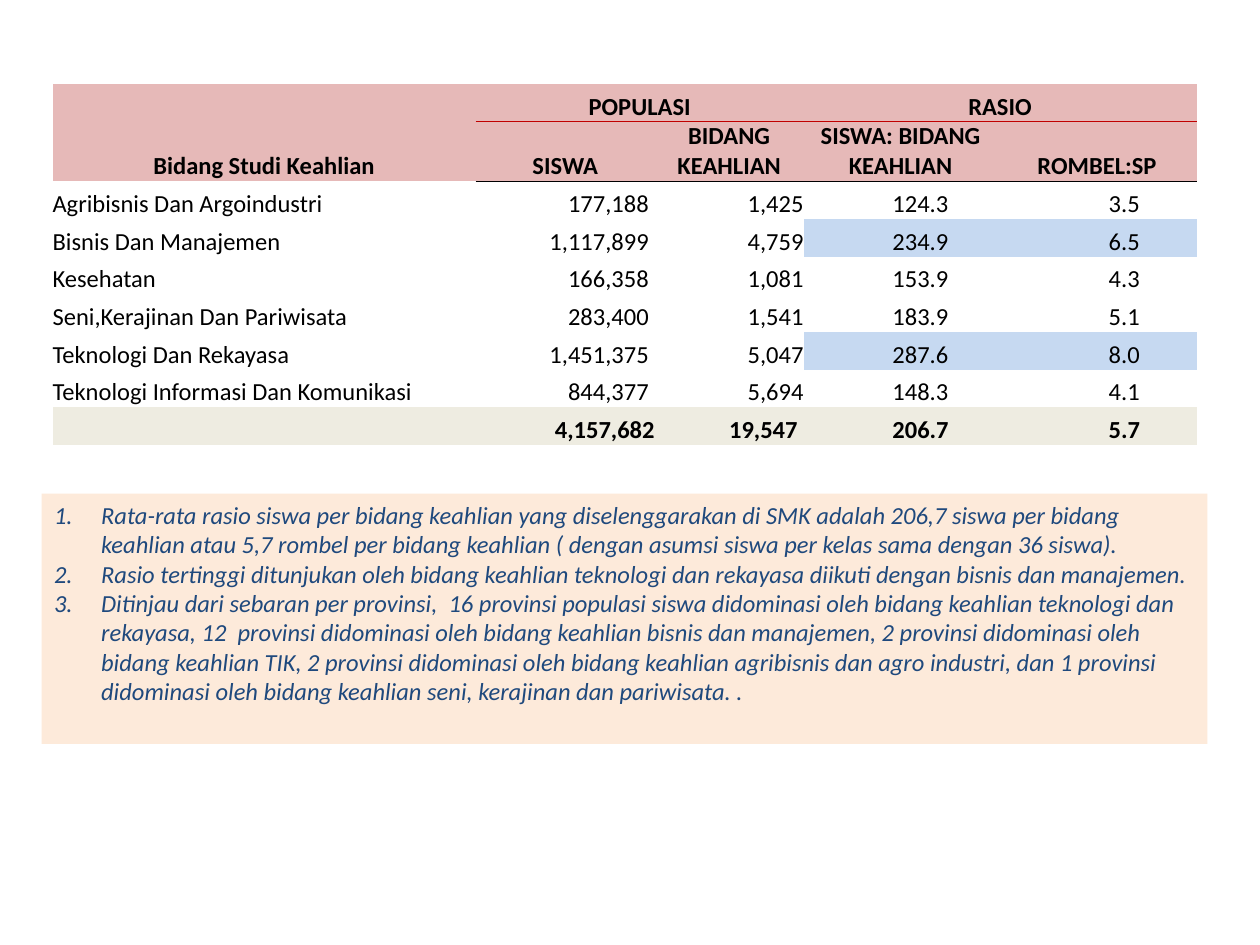
"""Build a slide with a table of vocational fields and numbered findings."""
from lxml import etree
from pptx import Presentation
from pptx.dml import color
from pptx.enum import shapes, text
from pptx.oxml import ns
from pptx.util import Cm, Pt

HEADER = [
    ("Bidang Studi Keahlian", "POPULASI", "", "RASIO", ""),
    ("", "SISWA", "BIDANG KEAHLIAN", "SISWA: BIDANG KEAHLIAN", "ROMBEL:SP"),
]
BODY = [
    ("Agribisnis Dan Argoindustri", "177,188", "1,425", "124.3", "3.5"),
    ("Bisnis Dan Manajemen", "1,117,899", "4,759", "234.9", "6.5"),
    ("Kesehatan", "166,358", "1,081", "153.9", "4.3"),
    ("Seni,Kerajinan Dan Pariwisata", "283,400", "1,541", "183.9", "5.1"),
    ("Teknologi Dan Rekayasa", "1,451,375", "5,047", "287.6", "8.0"),
    ("Teknologi Informasi Dan Komunikasi", "844,377", "5,694", "148.3", "4.1"),
]
TOTAL = ("", "4,157,682", "19,547", "206.7", "5.7")
FINDINGS = [
    "Rata-rata rasio siswa per bidang keahlian yang diselenggarakan di SMK adalah 206,7 siswa "
    "per bidang keahlian atau 5,7 rombel per bidang keahlian ( dengan asumsi siswa per kelas "
    "sama dengan 36 siswa).",
    "Rasio tertinggi ditunjukan oleh bidang keahlian teknologi dan rekayasa diikuti dengan "
    "bisnis dan manajemen.",
    "Ditinjau dari sebaran per provinsi,  16 provinsi populasi siswa didominasi oleh bidang "
    "keahlian teknologi dan rekayasa, 12  provinsi didominasi oleh bidang keahlian bisnis dan "
    "manajemen, 2 provinsi didominasi oleh bidang keahlian TIK, 2 provinsi didominasi oleh "
    "bidang keahlian agribisnis dan agro industri, dan 1 provinsi didominasi oleh bidang "
    "keahlian seni, kerajinan dan pariwisata. .",
]
COLUMN_WIDTHS = (8.53, 3.61, 3, 3.91, 4.01)
ROW_HEIGHTS = (0.76, 1.2) + (0.76,) * 7
MERGES = [((0, 0), (1, 0)), ((0, 1), (0, 2)), ((0, 3), (0, 4))]
LEFT_MARGINS = {3: 1.79, 4: 2.24}
RIGHT_MARGINS = {("body", 1): 0.12, ("total", 2): 0.12}
FILLS = {"header": "E6B9B8", "total": "EEECE1", "highlight": "C6D9F1"}
HIGHLIGHTED = {"Bisnis Dan Manajemen", "Teknologi Dan Rekayasa"}
NO_STYLE = "{2D5ABB26-0587-4C30-8999-92F81FD0307C}"
CELL_FORMAT = {"margin_left": 0, "margin_right": 0, "margin_top": 0, "margin_bottom": 0,
               "vertical_anchor": text.MSO_ANCHOR.BOTTOM}
FONT_FORMAT = {"name": "Calibri", "size": Pt(14)}


def rgb(value):
    return color.RGBColor.from_string(value)


def apply(target, values):
    for name, value in values.items():
        setattr(target, name, value)


def write(paragraph, words, ink, **extra):
    run = paragraph.add_run()
    run.text = words
    apply(run.font, {**FONT_FORMAT, **extra})
    run.font.color.rgb = rgb(ink)


def paint(target, value):
    target.fill.solid()
    target.fill.fore_color.rgb = rgb(value)


def add_border(cell, side, ink):
    line = etree.Element(ns.qn("a:" + side), w=str(Pt(0.5)))
    fill = etree.SubElement(line, ns.qn("a:solidFill"))
    etree.SubElement(fill, ns.qn("a:srgbClr"), val=ink)
    cell._tc.get_or_add_tcPr().insert(0, line)


def fill_cell(cell, words, kind, column, highlighted):
    apply(cell, CELL_FORMAT)
    paragraph = cell.text_frame.paragraphs[0]
    if kind == "header":
        paragraph.alignment = text.PP_ALIGN.CENTER
    else:
        cell.margin_left = Cm(LEFT_MARGINS.get(column, 0))
        cell.margin_right = Cm(RIGHT_MARGINS.get((kind, column), 0))
        paragraph.alignment = text.PP_ALIGN.RIGHT if column in (1, 2) else text.PP_ALIGN.LEFT
    write(paragraph, words, "000000", bold=kind != "body")
    fill = FILLS["highlight"] if highlighted else FILLS.get(kind)
    if fill:
        paint(cell, fill)
    else:
        cell.fill.background()


def add_population_table(slide):
    rows = [("header", row) for row in HEADER] + [("body", row) for row in BODY]
    rows.append(("total", TOTAL))
    frame = slide.shapes.add_table(len(rows), len(COLUMN_WIDTHS), Cm(1.06), Cm(1.69),
                                   Cm(sum(COLUMN_WIDTHS)), Cm(sum(ROW_HEIGHTS)))
    table = frame.table
    apply(table, {"first_row": False, "horz_banding": False})
    table._tbl.tblPr.find(ns.qn("a:tableStyleId")).text = NO_STYLE
    for column, width in zip(table.columns, COLUMN_WIDTHS):
        column.width = Cm(width)
    for row, height in zip(table.rows, ROW_HEIGHTS):
        row.height = Cm(height)
    for first, last in MERGES:
        table.cell(*first).merge(table.cell(*last))
    for r, (kind, row) in enumerate(rows):
        for c, words in enumerate(row):
            highlighted = row[0] in HIGHLIGHTED and c >= 3
            fill_cell(table.cell(r, c), words, kind, c, highlighted)
    for c in range(1, len(COLUMN_WIDTHS)):
        add_border(table.cell(0, c), "lnB", "C00000")
        add_border(table.cell(1, c), "lnB", "000000")
        add_border(table.cell(1, c), "lnT", "C00000")


def add_findings(slide):
    shape = slide.shapes.add_shape(shapes.MSO_SHAPE.RECTANGLE,
                                   Cm(0.84), Cm(9.95), Cm(23.5), Cm(5.05))
    shape.shadow.inherit = False
    paint(shape, "FDEADA")
    shape.line.fill.background()
    frame = shape.text_frame
    apply(frame, {"word_wrap": True, "vertical_anchor": text.MSO_ANCHOR.TOP})
    for index, finding in enumerate(FINDINGS):
        paragraph = frame.add_paragraph() if index else frame.paragraphs[0]
        paragraph.alignment = text.PP_ALIGN.LEFT
        properties = paragraph._p.get_or_add_pPr()
        properties.set("marL", str(Cm(0.95)))
        properties.set("indent", str(Cm(-0.95)))
        etree.SubElement(properties, ns.qn("a:buFont"), typeface="+mj-lt")
        etree.SubElement(properties, ns.qn("a:buAutoNum"), type="arabicPeriod")
        write(paragraph, finding, "1F497D", italic=True)


def main():
    presentation = Presentation()
    apply(presentation, {"slide_width": Cm(25.4), "slide_height": Cm(19.05)})
    slide = presentation.slides.add_slide(presentation.slide_layouts[6])
    add_population_table(slide)
    add_findings(slide)
    presentation.save("out.pptx")


if __name__ == "__main__":
    main()
